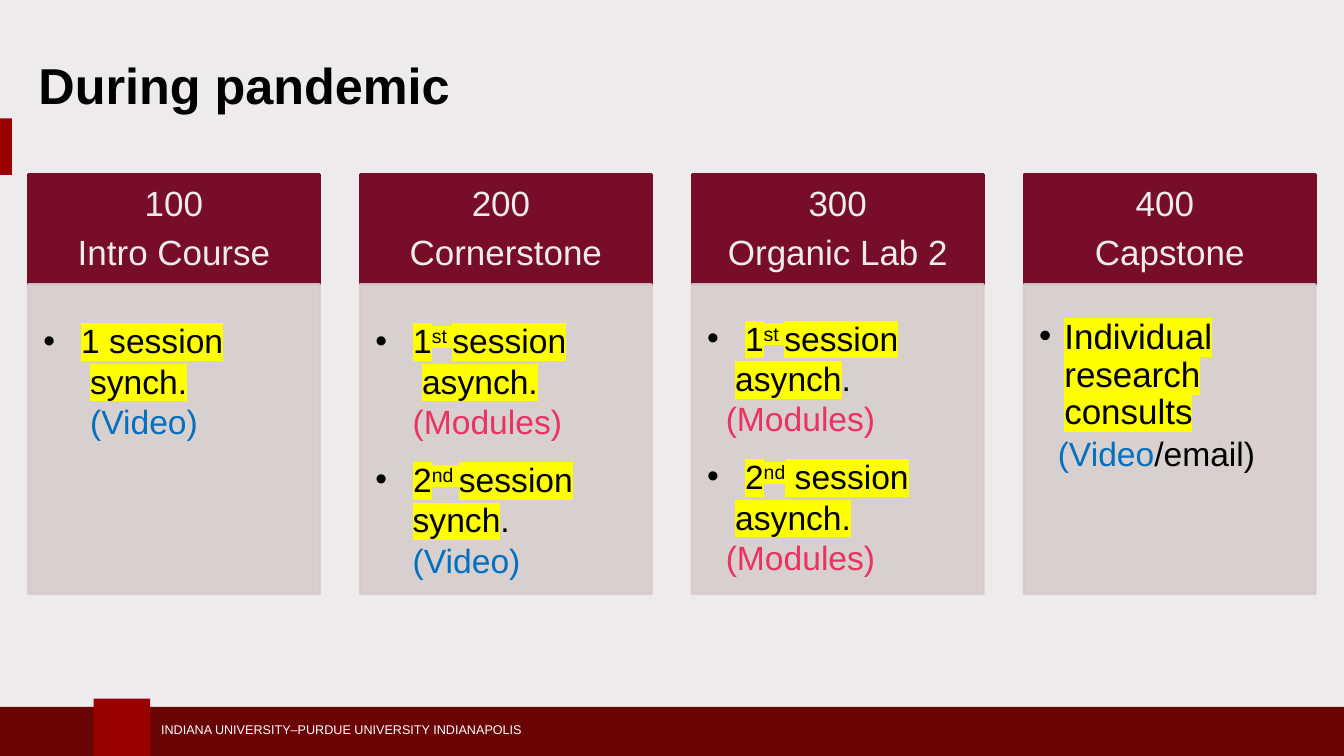
"""Build the slide on library sessions by course level during the pandemic."""
from dataclasses import dataclass

from lxml import etree
from pptx import Presentation
from pptx.dml.color import RGBColor
from pptx.enum.shapes import MSO_SHAPE
from pptx.enum.text import MSO_ANCHOR, PP_ALIGN
from pptx.oxml.ns import qn
from pptx.util import Pt

RECT = MSO_SHAPE.RECTANGLE
MIDDLE = MSO_ANCHOR.MIDDLE
TOP = MSO_ANCHOR.TOP
LEFT = PP_ALIGN.LEFT
CENTER = PP_ALIGN.CENTER

FONT = "Arial"
BLACK, WHITE, PALE = "000000", "FFFFFF", "EDEBEB"
RED, DARK, WINE, ROSE = "990000", "690304", "770D28", "D6CCCD"
BLUE, PINK, YELLOW = "0070C0", "E93361", "FFFF00"
START, PITCH, WIDTH = 20.2, 237.1, 208


@dataclass
class Run:
    text: str
    hue: str = BLACK
    mark: bool = False
    sup: bool = False


@dataclass
class Line:
    runs: list[Run]
    left: float = 0
    hang: float = 0
    before: float = 0
    size: float = 24
    space: float = 1


@dataclass
class Course:
    level: str
    name: str
    top: float
    lines: list[Line]


@dataclass
class Band:
    left: float
    top: float
    width: float
    height: float
    fill: str


def hot(text: str) -> Run:
    return Run(text, mark=True)


def nth(digit: str, tail: str, rest: str = "session") -> list[Run]:
    return [hot(digit), Run(tail, mark=True, sup=True), hot(rest)]


def item(runs: list[Run], before: float = 0) -> Line:
    return Line(runs, 27, 27, before)


def video(left: float) -> Line:
    return Line([Run("(Video)", BLUE)], left)


def modules(left: float) -> Line:
    return Line([Run("(Modules)", PINK)], left)


BANDS = [
    Band(0, 84.5, 8.6, 40.5, RED),
    Band(0, 505, 960, 35, DARK),
    Band(66.8, 499, 40.4, 41, RED),
]

COURSES = [
    Course("100", "Intro Course", 25.6, [
        item([hot("1 session")]),
        Line([hot("synch.")], 33.4),
        video(33.4),
    ]),
    Course("200 ", "Cornerstone", 25.6, [
        item(nth("1", "st ")),
        Line([hot("asynch.")], 33.4),
        modules(26.7),
        item(nth("2", "nd "), 12.7),
        Line([hot("synch"), Run(".")], 26.7),
        video(26.7),
    ]),
    Course("300", "Organic Lab 2", 23.6, [
        item(nth("1", "st ")),
        Line([hot("asynch"), Run(".")], 20),
        modules(13.3),
        item(nth("2", "nd", " session"), 12.7),
        Line([hot("asynch.")], 20),
        modules(13.3),
    ]),
    Course("400 ", "Capstone", 24.8, [
        Line([hot("Individual"), Run(" "), hot("research"), Run(" "),
              hot("consults")], 18, 18, 0, 25, 0.9),
        Line([Run("(Video", BLUE), Run("/email)")], 13.3, 0, 3.6, 24, 0.9),
    ]),
]


def tint(hue: str) -> RGBColor:
    return RGBColor.from_string(hue)


def box(slide, band: Band, line: bool = False):
    shape = slide.shapes.add_shape(
        RECT, Pt(band.left), Pt(band.top), Pt(band.width), Pt(band.height))
    shape.shadow.inherit = False
    shape.fill.solid()
    shape.fill.fore_color.rgb = tint(band.fill)
    if line:
        shape.line.color.rgb = tint(band.fill)
        shape.line.width = Pt(2)
    else:
        shape.line.fill.background()
    return shape


def fade(shape, share: int) -> None:
    for node in shape._element.spPr.iter(qn("a:srgbClr")):
        etree.SubElement(node, qn("a:alpha"), val=str(share * 1000))


def inset(frame, left: float, top: float, right: float, bottom: float) -> None:
    frame.margin_left, frame.margin_top = Pt(left), Pt(top)
    frame.margin_right, frame.margin_bottom = Pt(right), Pt(bottom)
    frame.word_wrap = True


def label(frame, texts: list[str], size: float, hue: str,
          align: PP_ALIGN = LEFT, bold: bool = False) -> None:
    frame.vertical_anchor = MIDDLE
    frame.text = "\n".join(texts)
    for para in frame.paragraphs:
        para.alignment = align
        font = para.font
        font.name, font.size, font.bold = FONT, Pt(size), bold
        font.color.rgb = tint(hue)


def write(para, line: Line) -> None:
    para.alignment = LEFT
    para.line_spacing = line.space
    if line.before:
        para.space_before = Pt(line.before)
    props = para._p.get_or_add_pPr()
    props.set("marL", str(Pt(line.left)))
    props.set("indent", str(-Pt(line.hang)))
    if line.hang:
        etree.SubElement(props, qn("a:buFont"), typeface=FONT)
        etree.SubElement(props, qn("a:buChar"), char="•")
    para.font.name, para.font.size = FONT, Pt(line.size)
    para.font.color.rgb = tint(line.runs[0].hue)
    for part in line.runs:
        run = para.add_run()
        run.text = part.text
        run.font.color.rgb = tint(part.hue)
        look = run._r.get_or_add_rPr()
        if part.sup:
            look.set("baseline", "30000")
        if part.mark:
            glow = etree.SubElement(look, qn("a:highlight"))
            etree.SubElement(glow, qn("a:srgbClr"), val=YELLOW)


def column(slide, left: float, course: Course) -> None:
    head = box(slide, Band(left, 124.6, WIDTH, 78.6, WINE), True)
    inset(head.text_frame, 13.7, 7.9, 13.7, 7.9)
    label(head.text_frame, [course.level, course.name], 25, PALE, CENTER)
    for para in head.text_frame.paragraphs:
        para.line_spacing = 0.9
    head.text_frame.paragraphs[0].space_after = Pt(8.5)

    body = box(slide, Band(left, 203.2, WIDTH, 221, ROSE), True)
    fade(body, 90)
    frame = body.text_frame
    inset(frame, 10.8, course.top, 13.7, 15.8)
    frame.vertical_anchor = TOP
    for place, line in enumerate(course.lines):
        write(frame.add_paragraph() if place else frame.paragraphs[0], line)


def main() -> None:
    deck = Presentation()
    deck.slide_width, deck.slide_height = Pt(960), Pt(540)
    slide = deck.slides.add_slide(deck.slide_layouts[6])
    slide.background.fill.solid()
    slide.background.fill.fore_color.rgb = tint(PALE)
    for band in BANDS:
        box(slide, band)
    foot = slide.shapes.add_textbox(Pt(108), Pt(512), Pt(379.4), Pt(18))
    foot.text_frame.word_wrap = True
    label(foot.text_frame, ["INDIANA UNIVERSITY–PURDUE UNIVERSITY INDIANAPOLIS"], 9, WHITE)
    for place, course in enumerate(COURSES):
        column(slide, START + place * PITCH, course)
    title = slide.shapes.add_textbox(Pt(20.4), Pt(34.8), Pt(311.8), Pt(51))
    title.text_frame.word_wrap = False
    label(title.text_frame, ["During pandemic"], 36, BLACK, bold=True)
    deck.save("out.pptx")


if __name__ == "__main__":
    main()
